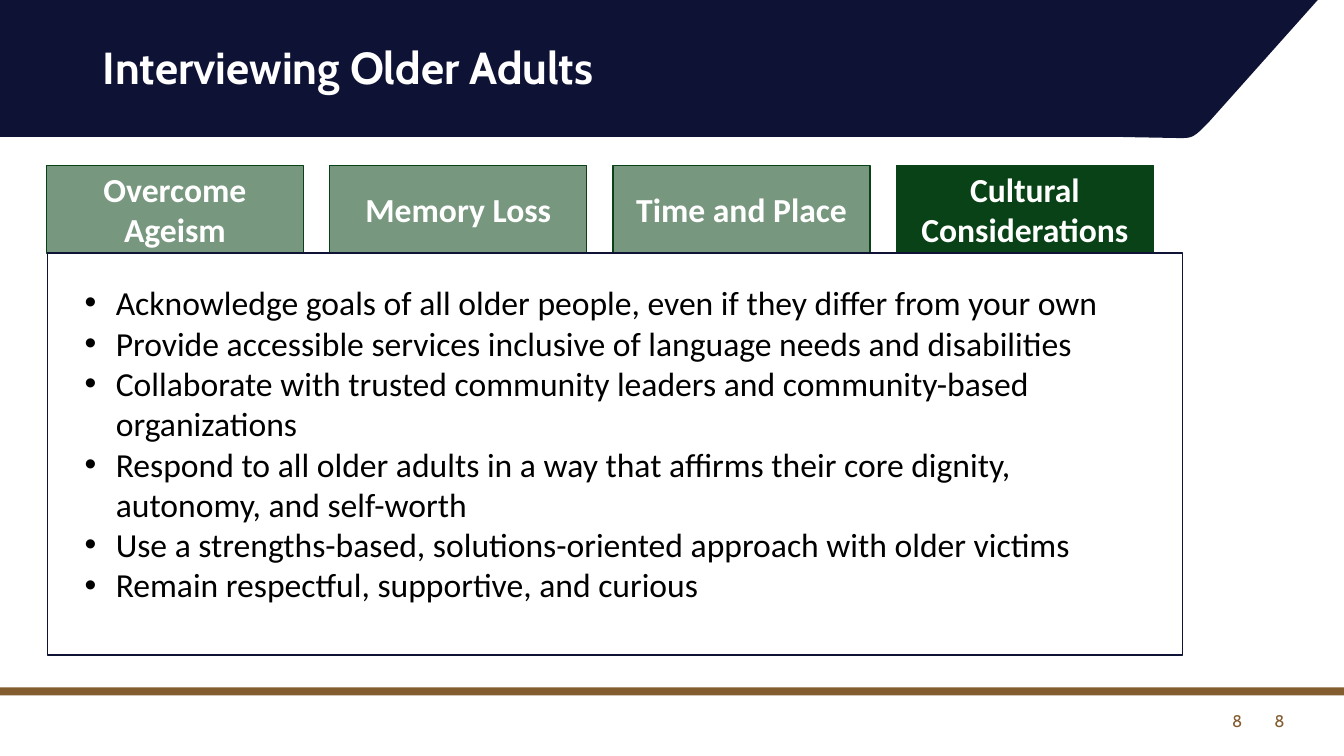
import pptx
import pptx.util
import pptx.dml.color
import pptx.enum.shapes
import pptx.enum.text
import lxml.etree
from dataclasses import dataclass
from pptx.oxml.ns import qn

TITLE = "Interviewing Older Adults"
TABS = ["Overcome Ageism", "Memory Loss", "Time and Place", "Cultural Considerations"]
ACTIVE_TAB = "Cultural Considerations"
BULLETS = [
    "Acknowledge goals of all older people, even if they differ from your own",
    "Provide accessible services inclusive of language needs and disabilities",
    "Collaborate with trusted community leaders and community-based organizations",
    "Respond to all older adults in a way that affirms their core dignity, autonomy, and self-worth",
    "Use a strengths-based, solutions-oriented approach with older victims",
    "Remain respectful, supportive, and curious",
]
PAGE_NUMBER = "8"


@dataclass(frozen=True)
class Theme:
    navy: str = "0E1336"
    panel_line: str = "0F1336"
    green: str = "094216"
    brown: str = "835C2F"
    white: str = "FFFFFF"
    black: str = "000000"
    heading_font: str = "Cabin"
    body_font: str = "Calibri"
    title_size: int = 32
    body_size: int = 24
    number_size: int = 12
    inactive_alpha: int = 55


THEME = Theme()
ALIGN = pptx.enum.text.PP_ALIGN
ANCHOR = pptx.enum.text.MSO_ANCHOR
Inches = pptx.util.Inches

SLIDE_WIDTH, SLIDE_HEIGHT = 13.33, 7.5
BANNER_WIDTH, BANNER_HEIGHT = 11.17, 1.36
TAB_LEFT, TAB_TOP, TAB_PITCH = 0.46, 1.64, 2.81
TAB_WIDTH, TAB_HEIGHT = 2.55, 0.87
PANEL_TOP = TAB_TOP + TAB_HEIGHT
BULLET_INDENT = 0.31
CORNER_CURVE = [(11.68, 1.37), (11.82, 1.37), (11.83, 1.38), (12, 1.2)]
CURVE_STEPS = 12


def rgb(color):
    return pptx.dml.color.RGBColor.from_string(color)


def paint(shape, fill, line=None):
    shape.shadow.inherit = False
    shape.fill.solid()
    shape.fill.fore_color.rgb = rgb(fill)
    if line:
        shape.line.color.rgb = rgb(line)
        shape.line.width = pptx.util.Pt(1)
    else:
        shape.line.fill.background()


def add_rectangle(slide, box, fill, line=None):
    shape = slide.shapes.add_shape(
        pptx.enum.shapes.MSO_SHAPE.RECTANGLE, *map(Inches, box))
    paint(shape, fill, line)
    return shape


def add_text(paragraph, text, font, size, color, bold=False):
    run = paragraph.add_run()
    run.text = text
    run.font.name = font
    run.font.size = pptx.util.Pt(size)
    run.font.color.rgb = rgb(color)
    run.font.bold = bold


def add_text_box(slide, box):
    frame = slide.shapes.add_textbox(*map(Inches, box)).text_frame
    frame.word_wrap = True
    return frame


def curve_point(share):
    weights = ((1 - share) ** 3, 3 * share * (1 - share) ** 2,
               3 * share ** 2 * (1 - share), share ** 3)
    return tuple(sum(weight * point[axis] for weight, point in zip(weights, CORNER_CURVE))
                 for axis in (0, 1))


def add_banner(slide):
    add_rectangle(slide, (0, 0, BANNER_WIDTH, BANNER_HEIGHT), THEME.navy)
    rounded = [curve_point(step / CURVE_STEPS) for step in range(CURVE_STEPS + 1)]
    outline = rounded + [(13.07, 0), (11.14, 0)]
    builder = slide.shapes.build_freeform(Inches(11.14), Inches(BANNER_HEIGHT))
    builder.add_line_segments([(Inches(x), Inches(y)) for x, y in outline], close=True)
    paint(builder.convert_to_shape(), THEME.navy)
    add_rectangle(slide, (0, 6.82, SLIDE_WIDTH, 0.08), THEME.brown)


def add_title(slide):
    title = slide.shapes.title
    title.left, title.top, title.width, title.height = map(Inches, (0.92, 0.4, 11.5, 1.45))
    slide.shapes._spTree.append(title._element)
    frame = title.text_frame
    frame.vertical_anchor = ANCHOR.TOP
    frame.auto_size = pptx.enum.text.MSO_AUTO_SIZE.NONE
    paragraph = frame.paragraphs[0]
    paragraph.alignment = ALIGN.LEFT
    paragraph.line_spacing = 0.9
    add_text(paragraph, TITLE, THEME.heading_font, THEME.title_size, THEME.white, True)


def add_tabs(slide):
    for column, label in enumerate(TABS):
        box = (TAB_LEFT + column * TAB_PITCH, TAB_TOP, TAB_WIDTH, TAB_HEIGHT)
        tab = add_rectangle(slide, box, THEME.green, THEME.green)
        if label != ACTIVE_TAB:
            color = tab._element.spPr.find(qn("a:solidFill"))[0]
            lxml.etree.SubElement(color, qn("a:alpha"), val=str(THEME.inactive_alpha * 1000))
        frame = tab.text_frame
        frame.word_wrap = True
        frame.vertical_anchor = ANCHOR.MIDDLE
        paragraph = frame.paragraphs[0]
        paragraph.alignment = ALIGN.CENTER
        add_text(paragraph, label, THEME.body_font, THEME.body_size, THEME.white, True)


def add_bullets(slide):
    add_rectangle(slide, (0.47, PANEL_TOP, 11.26, 3.99), THEME.white, THEME.panel_line)
    frame = add_text_box(slide, (0.74, 2.75, 10.81, 3.6))
    for index, text in enumerate(BULLETS):
        paragraph = frame.add_paragraph() if index else frame.paragraphs[0]
        properties = paragraph._p.get_or_add_pPr()
        properties.set("marL", str(Inches(BULLET_INDENT)))
        properties.set("indent", str(-Inches(BULLET_INDENT)))
        lxml.etree.SubElement(properties, qn("a:buFont"), typeface="Arial")
        lxml.etree.SubElement(properties, qn("a:buChar"), char="•")
        add_text(paragraph, text, THEME.body_font, THEME.body_size, THEME.black)


def add_page_numbers(slide):
    for left in (9.42, 9.84):
        frame = add_text_box(slide, (left, 6.95, 3, 0.4))
        frame.vertical_anchor = ANCHOR.MIDDLE
        paragraph = frame.paragraphs[0]
        paragraph.alignment = ALIGN.RIGHT
        add_text(paragraph, PAGE_NUMBER, THEME.heading_font, THEME.number_size, THEME.brown)


def main():
    presentation = pptx.Presentation()
    presentation.slide_width = Inches(SLIDE_WIDTH)
    presentation.slide_height = Inches(SLIDE_HEIGHT)
    slide = presentation.slides.add_slide(presentation.slide_layouts.get_by_name("Title Only"))
    add_banner(slide)
    add_title(slide)
    add_tabs(slide)
    add_bullets(slide)
    add_page_numbers(slide)
    presentation.save("out.pptx")


if __name__ == "__main__":
    main()
